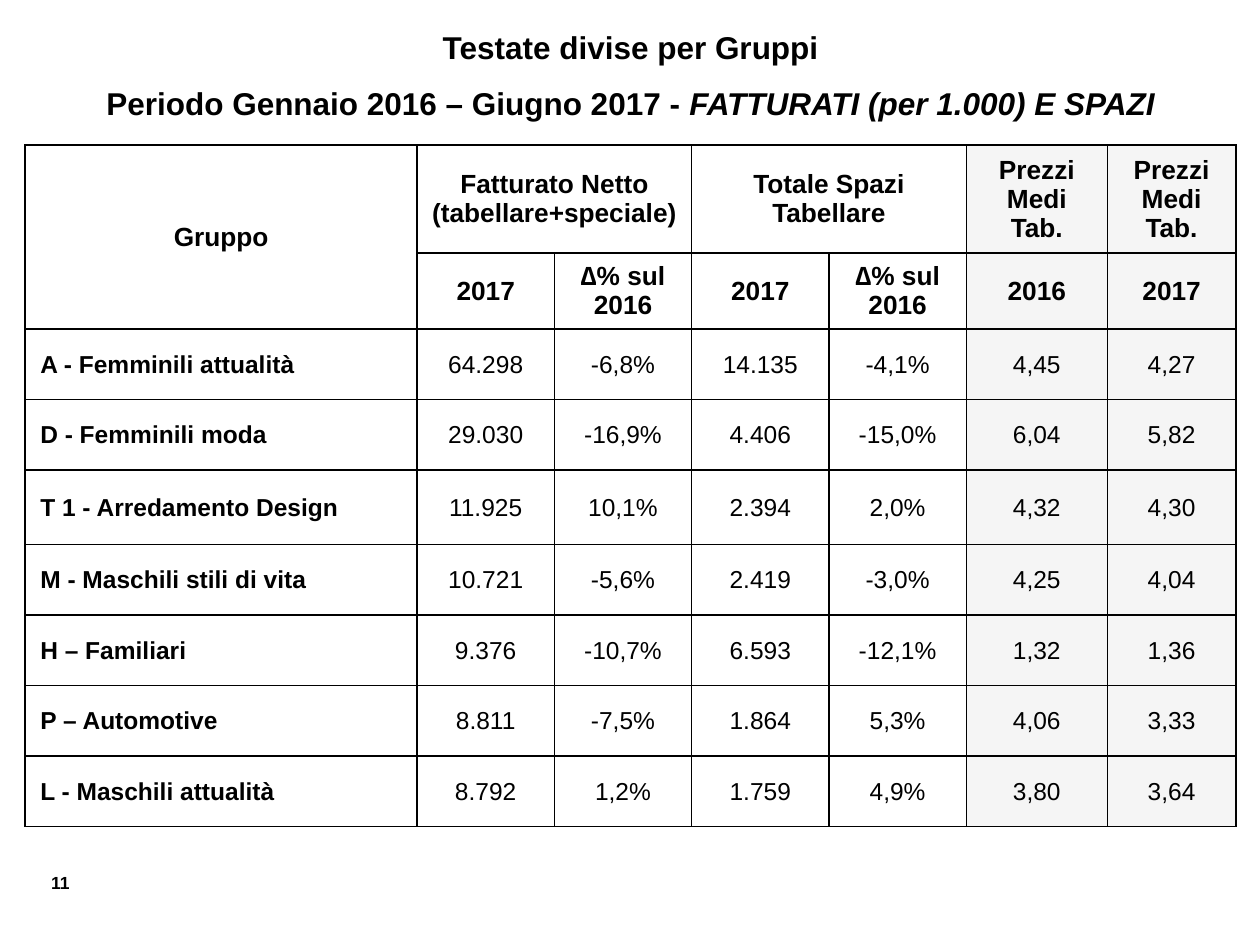
from lxml.etree import SubElement
from pptx import Presentation
from pptx.dml.color import RGBColor
from pptx.enum.text import MSO_ANCHOR, PP_ALIGN
from pptx.oxml.ns import qn
from pptx.util import Inches, Pt

BLACK = RGBColor(0x00, 0x00, 0x00)
GREY = RGBColor(0xF2, 0xF2, 0xF2)
FONT = "Arial"

WIDTHS = [3.11] + [1.09] * 4 + [1.12, 1.02]
HEIGHTS = [0.86, 0.6, 0.56, 0.56, 0.59] + [0.56] * 4
HEAD = [
    ["Gruppo", "Fatturato Netto (tabellare+speciale)", "",
     "Totale Spazi Tabellare", "", "Prezzi Medi Tab.", "Prezzi Medi Tab."],
    ["", "2017", "∆% sul 2016", "2017", "∆% sul 2016", "2016", "2017"],
]
BODY = [
    ["A - Femminili attualità", "64.298", "-6,8%", "14.135", "-4,1%", "4,45", "4,27"],
    ["D - Femminili moda", "29.030", "-16,9%", "4.406", "-15,0%", "6,04", "5,82"],
    ["T 1 - Arredamento Design", "11.925", "10,1%", "2.394", "2,0%", "4,32", "4,30"],
    ["M - Maschili stili di vita", "10.721", "-5,6%", "2.419", "-3,0%", "4,25", "4,04"],
    ["H – Familiari", "9.376", "-10,7%", "6.593", "-12,1%", "1,32", "1,36"],
    ["P – Automotive", "8.811", "-7,5%", "1.864", "5,3%", "4,06", "3,33"],
    ["L - Maschili attualità", "8.792", "1,2%", "1.759", "4,9%", "3,80", "3,64"],
]


def style(run, size, bold=True, italic=False):
    font = run.font
    font.name = FONT
    font.size = Pt(size)
    font.bold = bold
    font.italic = italic
    font.color.rgb = BLACK


def add_box(slide, left, top, width, height):
    box = slide.shapes.add_textbox(
        Inches(left), Inches(top), Inches(width), Inches(height))
    box.text_frame.word_wrap = True
    return box.text_frame


def add_title(slide):
    frame = add_box(slide, 0.2, 0.02, 9.61, 1.07)
    frame.text = "Testate divise per Gruppi\nPeriodo Gennaio 2016 – Giugno 2017 - "
    for para in frame.paragraphs:
        para.alignment = PP_ALIGN.CENTER
        para.line_spacing = 1.5
        style(para.runs[0], 18)
    run = frame.paragraphs[1].add_run()
    run.text = "FATTURATI (per 1.000) E SPAZI"
    style(run, 18, italic=True)


def add_number(slide):
    frame = add_box(slide, 0.19, 6.87, 0.46, 0.27)
    frame.text = "11"
    para = frame.paragraphs[0]
    para.alignment = PP_ALIGN.RIGHT
    style(para.runs[0], 10)


def set_border(cell):
    props = cell._tc.get_or_add_tcPr()
    for side in ("a:lnL", "a:lnR", "a:lnT", "a:lnB"):
        line = SubElement(props, qn(side), w=str(Pt(1)))
        fill = SubElement(line, qn("a:solidFill"))
        SubElement(fill, qn("a:srgbClr"), val=str(BLACK))


def set_fill(cell, shaded):
    if not shaded:
        cell.fill.background()
        return
    cell.fill.solid()
    cell.fill.fore_color.rgb = GREY
    color = cell._tc.tcPr.find(qn("a:solidFill")).find(qn("a:srgbClr"))
    SubElement(color, qn("a:alpha"), val="70000")


def set_margins(cell, left, top, right, bottom):
    cell.margin_left = Inches(left)
    cell.margin_top = Inches(top)
    cell.margin_right = Inches(right)
    cell.margin_bottom = Inches(bottom)


def fill_cell(cell, text, row, col):
    head = row < len(HEAD)
    label = col == 0 and not head
    set_border(cell)
    set_fill(cell, col >= 5)
    cell.vertical_anchor = MSO_ANCHOR.MIDDLE
    if head:
        set_margins(cell, 0.1, 0.05, 0.1, 0.05)
    else:
        set_margins(cell, 0.12 if label else 0.01, 0.01, 0.01, 0)
    if not text:
        return
    cell.text_frame.text = text
    para = cell.text_frame.paragraphs[0]
    para.alignment = PP_ALIGN.LEFT if label else PP_ALIGN.CENTER
    style(para.runs[0], 15 if head else 14, bold=head or label)


def add_grid(slide):
    rows = HEAD + BODY
    table = slide.shapes.add_table(
        len(rows), len(WIDTHS), Inches(0.2), Inches(1.15),
        Inches(sum(WIDTHS)), Inches(sum(HEIGHTS))).table
    table.first_row = False
    table.horz_banding = False
    for column, width in zip(table.columns, WIDTHS):
        column.width = Inches(width)
    for line, height in zip(table.rows, HEIGHTS):
        line.height = Inches(height)
    for row, texts in enumerate(rows):
        for col, text in enumerate(texts):
            fill_cell(table.cell(row, col), text, row, col)
    table.cell(0, 0).merge(table.cell(1, 0))
    for col in (1, 3):
        table.cell(0, col).merge(table.cell(0, col + 1))


def main():
    deck = Presentation()
    deck.slide_width = Inches(10)
    deck.slide_height = Inches(7.5)
    slide = deck.slides.add_slide(deck.slide_layouts[6])
    add_number(slide)
    add_title(slide)
    add_grid(slide)
    deck.save("out.pptx")


if __name__ == "__main__":
    main()
